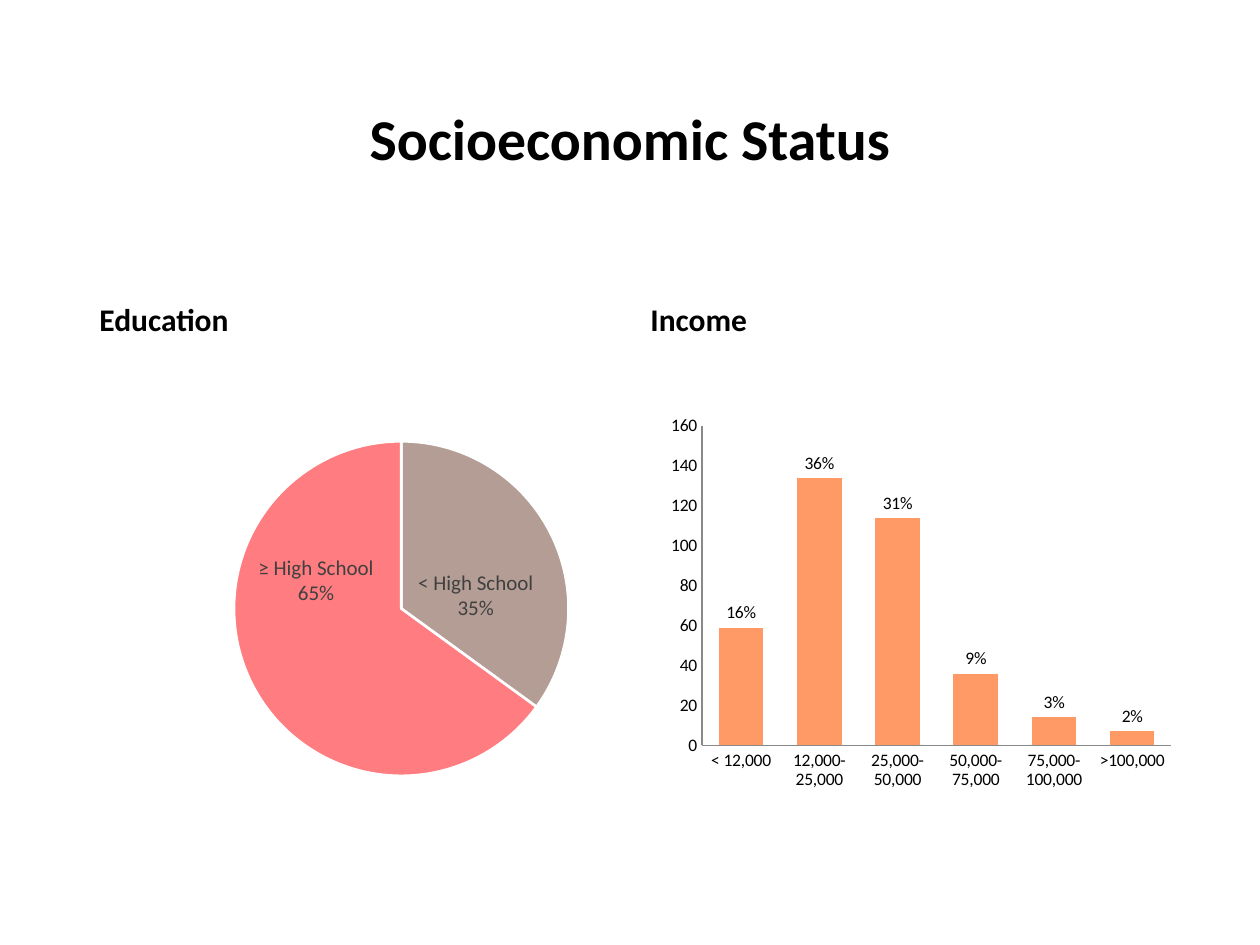
from lxml import etree
from pptx import Presentation
from pptx import util as u
from pptx.chart.data import CategoryChartData
from pptx.dml.color import RGBColor
from pptx.enum import chart as ch, text
from pptx.oxml import parse_xml
from pptx.oxml.ns import nsdecls, qn

PX = u.Inches(1) / 126
FONT = "Calibri"
COLORS = {"text": "000000", "label": "404040", "taupe": "B39D94", "coral": "FF7C80",
          "orange": "FF9966", "axis": "898989", "white": "FFFFFF"}


def style(font, size, color="text", bold=False):
    font.name, font.size, font.bold = FONT, u.Pt(size), bold
    font.color.rgb = RGBColor.from_string(COLORS[color])


def layout(inner=False, **fractions):
    """Manual chart layout from fractions of the chart's size."""
    xml = etree.Element(qn("c:manualLayout"))
    if inner:
        for tag, val in (("layoutTarget", "inner"), ("xMode", "edge"), ("yMode", "edge")):
            etree.SubElement(xml, qn("c:" + tag)).set("val", val)
    for tag, val in fractions.items():
        etree.SubElement(xml, qn("c:" + tag)).set("val", str(val))
    holder = parse_xml(f"<c:layout {nsdecls('c')}/>")
    holder.append(xml)
    return holder


prs = Presentation()
prs.slide_width, prs.slide_height = u.Inches(10), u.Inches(7.5)
slide = prs.slides.add_slide(prs.slide_layouts[5])

# Title
title = slide.shapes.title
title.left, title.top, title.width, title.height = [round(v * PX) for v in (87, 50, 1086, 183)]
title.text_frame.text = "Socioeconomic Status"
title.text_frame.vertical_anchor = text.MSO_ANCHOR.MIDDLE
heading = title.text_frame.paragraphs[0]
heading.alignment, heading.line_spacing = text.PP_ALIGN.CENTER, 0.9
style(heading.runs[0].font, 33, bold=True)

# Column headings
for words, left in (("Education", 87), ("Income", 638)):
    box = slide.shapes.add_textbox(*[round(v * PX) for v in (left, 232, 534, 113)])
    frame = box.text_frame
    frame.word_wrap = True
    frame.vertical_anchor = text.MSO_ANCHOR.BOTTOM
    frame.text = words
    frame.paragraphs[0].line_spacing = 0.9
    style(frame.paragraphs[0].runs[0].font, 18, bold=True)

# Charts: type, left edge, categories, values, plot area
pie_kind, column_kind = ch.XL_CHART_TYPE.PIE, ch.XL_CHART_TYPE.COLUMN_CLUSTERED
charts = []
for kind, left, categories, values, area in (
    (pie_kind, 105, ["< High School", "≥ High School"], [35, 65],
     dict(x=0.24, y=0.19, w=0.63, h=0.66)),
    (column_kind, 638,
     ["< 12,000", "12,000-25,000", "25,000-50,000", "50,000-75,000", "75,000-100,000", ">100,000"],
     [59, 134, 114, 36, 14, 7], dict(x=0.12, y=0.16, w=0.88, h=0.63)),
):
    data = CategoryChartData()
    data.categories = categories
    data.add_series("Series 1", values)
    chart = slide.shapes.add_chart(
        kind, *[round(v * PX) for v in (left, 345, 534, 507)], data).chart
    chart.has_title = chart.has_legend = False
    style(chart.font, 10)
    plot_area = chart._chartSpace.chart.plotArea
    for old in plot_area.findall(qn("c:layout")):
        plot_area.remove(old)
    plot_area.insert(0, layout(inner=True, **area))
    charts.append(chart)
education, income = charts

# Education slices, with each label nudged from its slice's centre
pie = education.plots[0]
pie.vary_by_categories = True
for i, (color, dx, dy) in enumerate((("taupe", 0, 0.05), ("coral", -0.02, -0.13))):
    point = pie.series[0].points[i]
    point.format.fill.solid()
    point.format.fill.fore_color.rgb = RGBColor.from_string(COLORS[color])
    point.format.line.color.rgb = RGBColor.from_string(COLORS["white"])
    point.format.line.width = u.Pt(1.5)
    style(point.data_label.font, 12, "label")
    point.data_label.position = ch.XL_LABEL_POSITION.CENTER
    label = pie.series[0]._element.findall(".//" + qn("c:dLbl"))[i]
    label.insert(1, layout(x=dx, y=dy))
    for tag, val in (("showVal", "0"), ("showCatName", "1"), ("showPercent", "1")):
        label.find(qn("c:" + tag)).set("val", val)
    etree.SubElement(label, qn("c:separator")).text = "\n"

# Income columns and their shares
columns = income.plots[0]
columns.vary_by_categories = False
columns.gap_width = 75
bars = columns.series[0]
bars.format.fill.solid()
bars.format.fill.fore_color.rgb = RGBColor.from_string(COLORS["orange"])
for i, share in enumerate(("16%", "36%", "31%", "9%", "3%", "2%")):
    label = bars.points[i].data_label
    label.text_frame.text = share
    style(label.text_frame.paragraphs[0].runs[0].font, 10)
    label.position = ch.XL_LABEL_POSITION.OUTSIDE_END

# Income axes
for axis in (income.category_axis, income.value_axis):
    axis.has_major_gridlines = False
    axis.major_tick_mark = axis.minor_tick_mark = ch.XL_TICK_MARK.NONE
    axis.format.line.color.rgb = RGBColor.from_string(COLORS["axis"])
    axis.format.line.width = u.Pt(0.75)
    style(axis.tick_labels.font, 10)
income.value_axis.minimum_scale = 0
income.value_axis.maximum_scale = 160
income.value_axis.major_unit = 20

prs.save("out.pptx")
